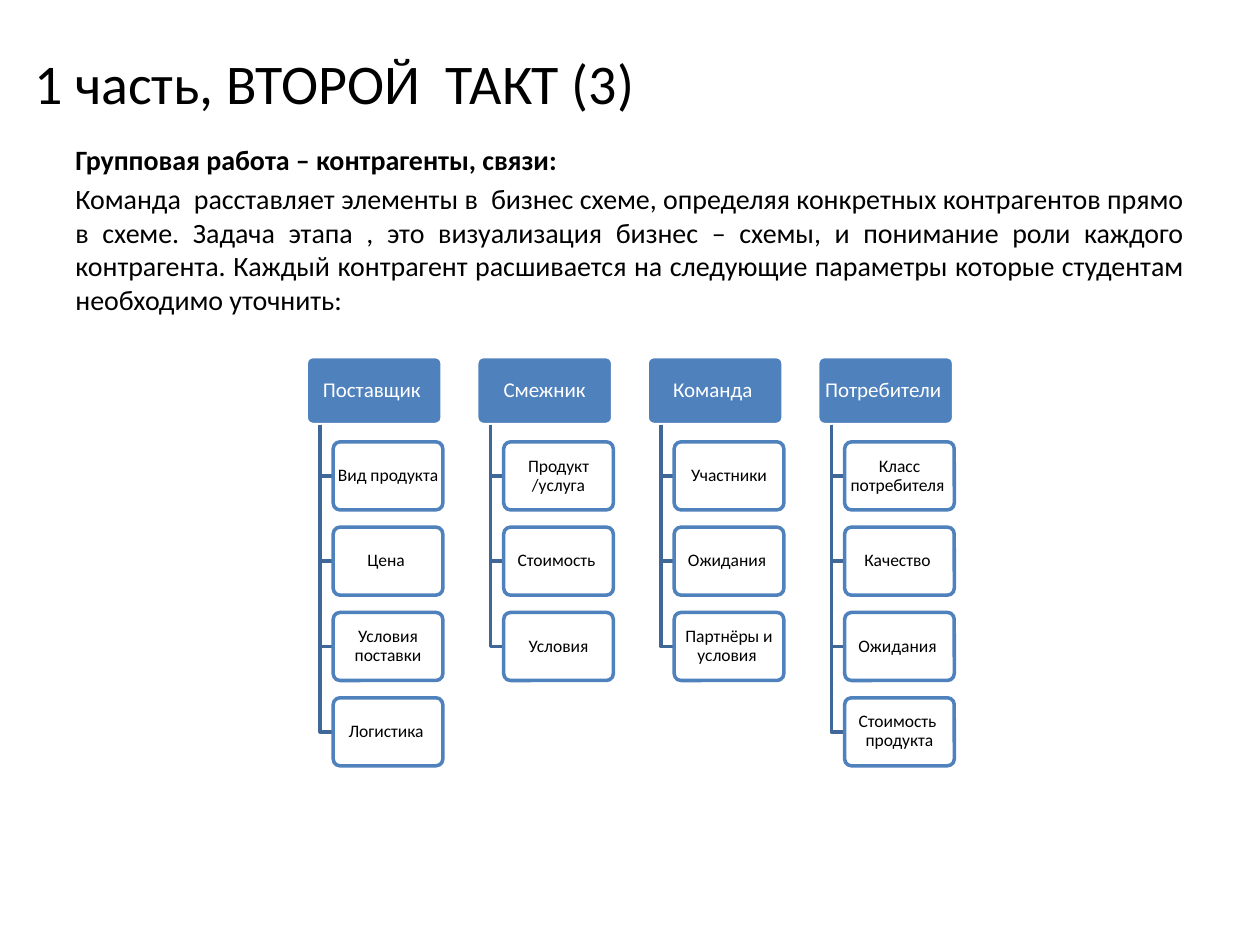
from lxml.etree import SubElement
from pptx import Presentation
from pptx.dml.color import RGBColor
from pptx.enum.shapes import MSO_SHAPE
from pptx.enum.text import MSO_ANCHOR, MSO_AUTO_SIZE, PP_ALIGN
from pptx.oxml.ns import qn
from pptx.util import Inches, Pt

COLORS = {"text": "000000", "white": "FFFFFF", "blue": "4F81BD", "link": "3F6797"}
FONT = "Calibri"

# Column heading and its parameters
COLUMNS = [
    ("Поставщик ", ["Вид продукта ", "Цена ", "Условия поставки", "Логистика "]),
    ("Смежник", ["Продукт /услуга", "Стоимость ", "Условия"]),
    ("Команда ", ["Участники", "Ожидания ", "Партнёры и условия "]),
    ("Потребители ", ["Класс потребителя ", "Качество ", "Ожидания ", "Стоимость  продукта"]),
]
LEFT, TOP = 2.43, 2.83
COLUMN_STEP, ROW_STEP = 1.353, 0.677
HEAD_WIDTH, ITEM_WIDTH, BOX_HEIGHT = 1.08, 0.87, 0.54
LINK_INDENT, ITEM_INDENT = 0.11, 0.215


def format_text(paragraph, size, color, align, bold=False):
    paragraph.alignment = align
    for run in paragraph.runs:
        run.font.name = FONT
        run.font.size = Pt(size)
        run.font.bold = bold
        run.font.color.rgb = RGBColor.from_string(COLORS[color])


def add_box(left, top, width, text, size, fill, line, color, margins):
    box = slide.shapes.add_shape(MSO_SHAPE.ROUNDED_RECTANGLE, Inches(left), Inches(top),
                                 Inches(width), Inches(BOX_HEIGHT))
    box.adjustments[0] = 0.1
    box.shadow.inherit = False
    box.fill.solid()
    box.fill.fore_color.rgb = RGBColor.from_string(COLORS[fill])
    box.line.color.rgb = RGBColor.from_string(COLORS[line])
    box.line.width = Pt(2)
    frame = box.text_frame
    frame.word_wrap = True
    frame.vertical_anchor = MSO_ANCHOR.MIDDLE
    frame.margin_left = frame.margin_right = Inches(margins[0])
    frame.margin_top = frame.margin_bottom = Inches(margins[1])
    frame.text = text
    paragraph = frame.paragraphs[0]
    paragraph.line_spacing = 0.9
    format_text(paragraph, size, color, PP_ALIGN.CENTER)
    return box


presentation = Presentation()
presentation.slide_width = Inches(10)
presentation.slide_height = Inches(7.5)
slide = presentation.slides.add_slide(presentation.slide_layouts[5])

# Title
title = slide.shapes.title
title.left, title.top = Inches(0.17), Inches(0.3)
title.width, title.height = Inches(9.67), Inches(0.7)
title.text_frame.text = "1 часть, ВТОРОЙ  ТАКТ (3)"
title.text_frame.auto_size = MSO_AUTO_SIZE.NONE
title.text_frame.vertical_anchor = MSO_ANCHOR.MIDDLE
format_text(title.text_frame.paragraphs[0], 32, "text", PP_ALIGN.LEFT)

# Task description
body = slide.shapes.add_textbox(Inches(0.5), Inches(1.08), Inches(9), Inches(5.62))
body.text_frame.word_wrap = True
body.text_frame.text = (
    "Групповая работа – контрагенты, связи:\n"
    "Команда  расставляет элементы в  бизнес схеме, определяя конкретных контрагентов "
    "прямо в схеме. Задача этапа , это визуализация бизнес – схемы, и понимание роли "
    "каждого контрагента. Каждый контрагент расшивается на следующие параметры которые "
    "студентам необходимо уточнить:"
)
for index, paragraph in enumerate(body.text_frame.paragraphs):
    paragraph.space_before = Pt(3.2)
    format_text(paragraph, 16, "text", PP_ALIGN.JUSTIFY, bold=index == 0)

# Counterparty columns
for column, (heading, items) in enumerate(COLUMNS):
    left = LEFT + column * COLUMN_STEP
    add_box(left, TOP, HEAD_WIDTH, heading, 12, "blue", "white", "white", (0.03, 0.02))
    link_left, item_left = left + LINK_INDENT, left + ITEM_INDENT
    link_top = TOP + BOX_HEIGHT

    for row, item in enumerate(items, start=1):
        item_top = TOP + row * ROW_STEP
        middle = item_top + BOX_HEIGHT / 2

        # Elbow line from the heading to the parameter
        builder = slide.shapes.build_freeform(Inches(link_left), Inches(link_top))
        builder.add_line_segments([(Inches(link_left), Inches(middle)),
                                   (Inches(item_left), Inches(middle))], close=False)
        link = builder.convert_to_shape()
        link.shadow.inherit = False
        link.fill.background()
        link.line.color.rgb = RGBColor.from_string(COLORS["link"])
        link.line.width = Pt(2)

        # Parameter box with a 90 % opaque fill
        box = add_box(item_left, item_top, ITEM_WIDTH, item, 10,
                      "white", "blue", "text", (0.02, 0.01))
        fill_color = box.element.spPr.find(qn("a:solidFill"))[0]
        SubElement(fill_color, qn("a:alpha")).set("val", "90000")

presentation.save("out.pptx")
